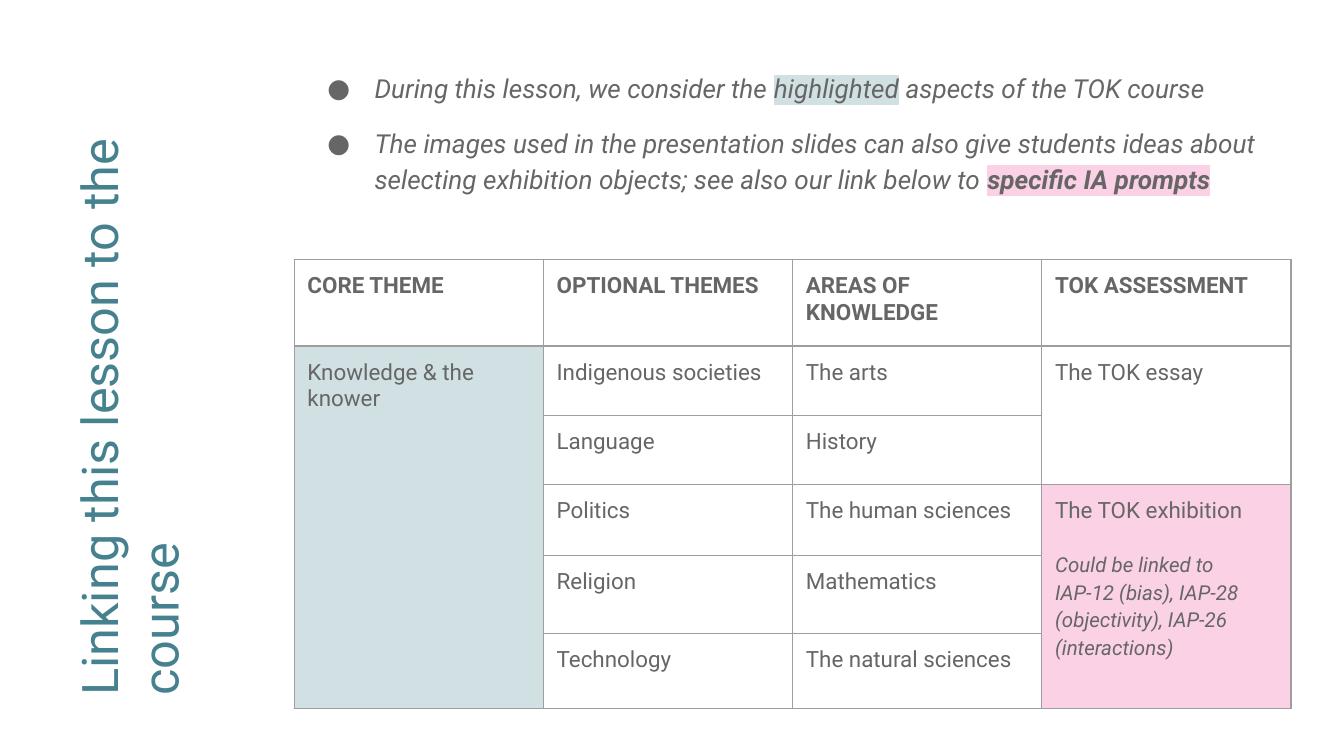
import pptx
import pptx.dml.color
import pptx.oxml
import pptx.oxml.ns
import pptx.util
from pptx.util import Cm, Pt

TEAL = pptx.dml.color.RGBColor(0x45, 0x81, 0x8E)
GREY = pptx.dml.color.RGBColor(0x66, 0x66, 0x66)
BORDER = pptx.dml.color.RGBColor(0x9E, 0x9E, 0x9E)
WHITE = pptx.dml.color.RGBColor(0xFF, 0xFF, 0xFF)
PALE_BLUE = pptx.dml.color.RGBColor(0xD0, 0xE0, 0xE3)
PINK = pptx.dml.color.RGBColor(0xFB, 0xD1, 0xE6)
FONT = "Roboto"
INSET = Cm(0.25)


def style(paragraph, size, color=GREY, bold=False, italic=False):
    font = paragraph.font
    font.name, font.size, font.bold, font.italic = FONT, Pt(size), bold, italic
    font.color.rgb = color


def add_xml(parent, xml, index=None):
    """Put a DrawingML fragment into parent, at the end unless index is given."""
    tag, rest = xml.split(" ", 1)
    element = pptx.oxml.parse_xml(f"{tag} {pptx.oxml.ns.nsdecls('a')} {rest}")
    parent.insert(len(parent) if index is None else index, element)


presentation = pptx.Presentation()
presentation.slide_width, presentation.slide_height = Cm(25.4), Cm(14.29)
slide = presentation.slides.add_slide(presentation.slide_layouts[6])

# Title, reading upwards along the left edge
title = slide.shapes.add_textbox(Cm(-3.35), Cm(5.41), Cm(12.37), Cm(3.61))
title.rotation = 270
title.text_frame.text = "Linking this lesson to the course"
style(title.text_frame.paragraphs[0], 27, TEAL)

# Introductory points: (text, highlight, bold)
points = [
    [("During this lesson, we consider the ", None, False),
     ("highlighted", PALE_BLUE, False),
     (" aspects of the TOK course", None, False)],
    [("The images used in the presentation slides can also give students ideas "
      "about selecting exhibition objects; see also our link below to ", None, False),
     ("specific IA prompts", PINK, True)],
]
intro = slide.shapes.add_textbox(Cm(5.56), Cm(1.04), Cm(18.97), Cm(3.1))
for number, point in enumerate(points):
    frame = intro.text_frame
    paragraph = frame.add_paragraph() if number else frame.paragraphs[0]
    properties = paragraph._p.get_or_add_pPr()
    properties.set("marL", str(Cm(1.27)))
    properties.set("indent", str(Cm(-0.89)))
    add_xml(properties, f'<a:buClr ><a:srgbClr val="{GREY}"/></a:buClr>')
    add_xml(properties, f'<a:buFont typeface="{FONT}"/>')
    add_xml(properties, '<a:buChar char="●"/>')
    paragraph.line_spacing = 1.15
    if number:
        paragraph.space_before = Pt(10)
    style(paragraph, 14, italic=True)
    for text, highlight, bold in point:
        run = paragraph.add_run()
        run.text = text
        if bold:
            run.font.bold = True
        if highlight:
            add_xml(run._r.get_or_add_rPr(),
                    f'<a:highlight ><a:srgbClr val="{highlight}"/></a:highlight>')

for box in (title, intro):
    frame = box.text_frame
    frame.word_wrap = True
    frame.margin_left = frame.margin_right = INSET
    frame.margin_top = frame.margin_bottom = INSET

# Course overview
course = [
    ["CORE THEME", "OPTIONAL THEMES", "AREAS OF KNOWLEDGE", "TOK ASSESSMENT"],
    ["Knowledge & the knower", "Indigenous societies", "The arts", "The TOK essay"],
    ["", "Language", "History", ""],
    ["", "Politics", "The human sciences", "The TOK exhibition"],
    ["", "Religion", "Mathematics", ""],
    ["", "Technology", "The natural sciences", ""],
]
row_heights = [1.63, 1.32, 1.3, 1.34, 1.47, 1.42]
column_width = 4.71
fills = {(1, 0): PALE_BLUE, (3, 3): PINK}

table = slide.shapes.add_table(len(course), 4, Cm(5.56), Cm(4.91),
                               Cm(4 * column_width), Cm(sum(row_heights))).table
table.first_row = table.horz_banding = False
for column in table.columns:
    column.width = Cm(column_width)
for row, height in zip(table.rows, row_heights):
    row.height = Cm(height)

for r, texts in enumerate(course):
    for c, text in enumerate(texts):
        cell = table.cell(r, c)
        cell.margin_left = cell.margin_right = INSET
        cell.margin_top = cell.margin_bottom = INSET
        cell.fill.solid()
        cell.fill.fore_color.rgb = fills.get((r, c), WHITE)
        cell.text = text
        style(cell.text_frame.paragraphs[0], 12, bold=r == 0)
        for index, side in enumerate("LRTB"):
            add_xml(cell._tc.get_or_add_tcPr(),
                    f'<a:ln{side} w="{Pt(0.75)}"><a:solidFill><a:srgbClr val="{BORDER}"/>'
                    f'</a:solidFill></a:ln{side}>', index)

prompts = table.cell(3, 3).text_frame.add_paragraph()
prompts.text = ("Could be linked to IAP-12 (bias), IAP-28 (objectivity), "
                "IAP-26 (interactions)")
prompts.line_spacing = 1.15
prompts.space_before = Pt(14)
style(prompts, 11, italic=True)

for first, last, column in [(1, 5, 0), (1, 2, 3), (3, 5, 3)]:
    table.cell(first, column).merge(table.cell(last, column))

presentation.save("out.pptx")
